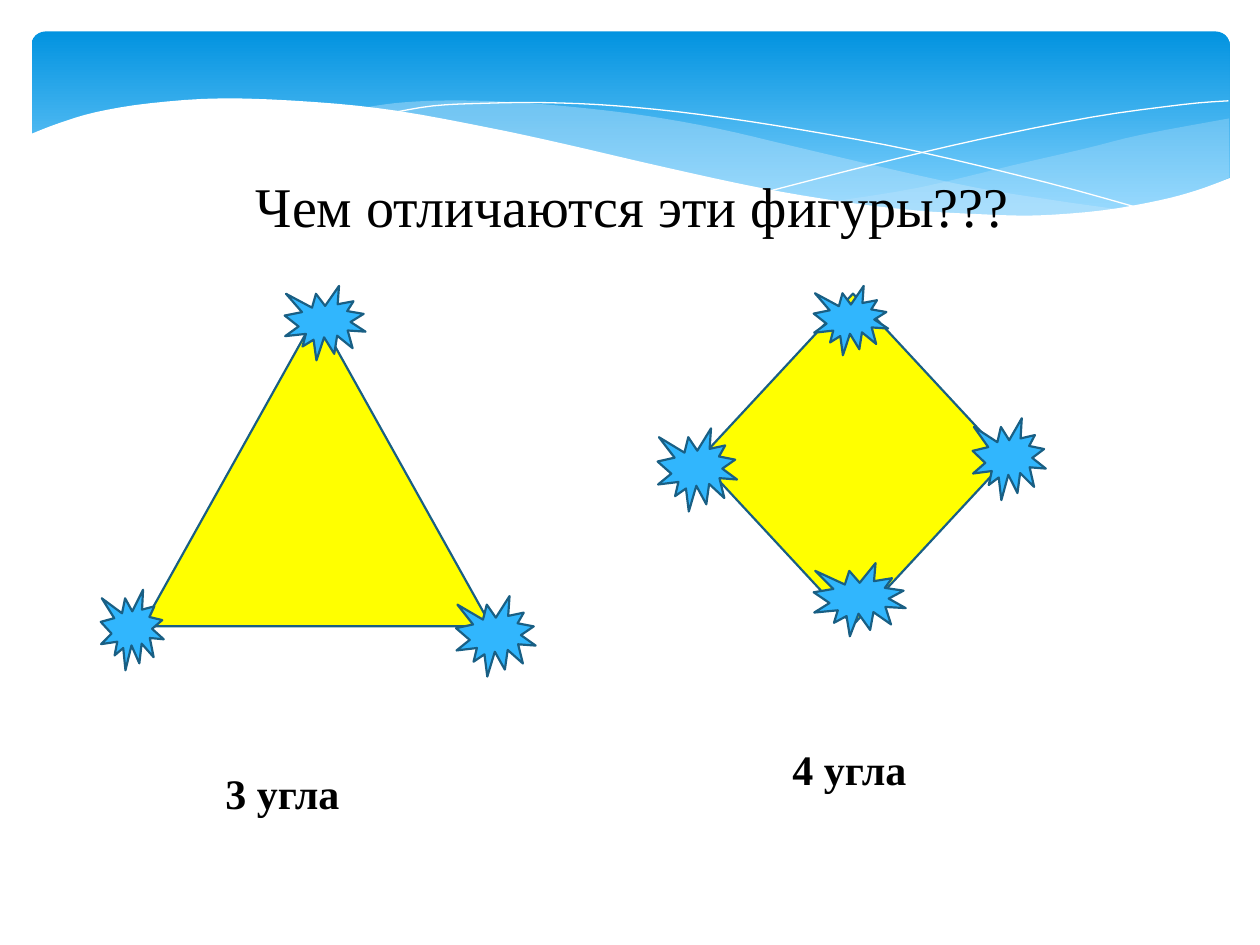
from dataclasses import dataclass

from lxml.etree import SubElement
from pptx import Presentation
from pptx.dml.color import RGBColor as Rgb
from pptx.enum.shapes import MSO_SHAPE as Preset
from pptx.enum.text import MSO_AUTO_SIZE as AutoSize
from pptx.oxml.ns import qn
from pptx.util import Pt


@dataclass(frozen=True)
class Theme:
    font: str = "Times New Roman"
    title_size: float = 32
    label_size: float = 24
    text: str = "000000"
    paper: str = "FFFFFF"
    sky_top: str = "0293E0"
    sky_bottom: str = "83D3FE"
    wave: str = "C6E7FC"
    figure: str = "FFFF00"
    burst: str = "31B6FD"
    outline: str = "195F84"
    outline_width: float = 1.25


def apply(target, values):
    for name, value in values.items():
        setattr(target, name, value)


def smooth(knots, steps=4):
    """Catmull-Rom curve through the knots."""
    padded = [knots[0], *knots, knots[-1]]
    curve = [knots[0]]
    for a, b, c, d in zip(padded, padded[1:], padded[2:], padded[3:]):
        for step in range(1, steps + 1):
            t = step / steps
            curve.append(tuple(
                (2 * q + (r - p) * t + (2 * p - 5 * q + 4 * r - s) * t ** 2
                 + (3 * q - p - 3 * r + s) * t ** 3) / 2
                for p, q, r, s in zip(a, b, c, d)))
    return curve


class SlideBuilder:
    def __init__(self, slide, theme):
        self.slide, self.theme = slide, theme

    def paint(self, shape, fill=None, line=None, width=0.0, alpha=None):
        shape.shadow.inherit = False
        if fill:
            shape.fill.solid()
            shape.fill.fore_color.rgb = Rgb.from_string(fill)
        else:
            shape.fill.background()
        if alpha is not None:
            color = shape._element.spPr.find(qn("a:solidFill"))[0]
            SubElement(color, qn("a:alpha"), val=str(alpha * 1000))
        if line:
            shape.line.color.rgb = Rgb.from_string(line)
            shape.line.width = Pt(width)
        else:
            shape.line.fill.background()

    def preset(self, kind, box, fill):
        shape = self.slide.shapes.add_shape(kind, *map(Pt, box))
        self.paint(shape, fill, self.theme.outline, self.theme.outline_width)

    def sky(self, box, radius):
        shape = self.slide.shapes.add_shape(Preset.ROUNDED_RECTANGLE, *map(Pt, box))
        shape.adjustments[0] = radius
        self.paint(shape)
        shape.fill.gradient()
        shape.fill.gradient_angle = 270
        colors = (self.theme.sky_top, self.theme.sky_bottom)
        for stop, color, position in zip(shape.fill.gradient_stops, colors, (0, 0.9)):
            stop.color.rgb = Rgb.from_string(color)
            stop.position = position

    def outline(self, points, closed=True, **style):
        start, *rest = [(Pt(x), Pt(y)) for x, y in points]
        builder = self.slide.shapes.build_freeform(*start)
        builder.add_line_segments(rest, close=closed)
        self.paint(builder.convert_to_shape(), **style)

    def text(self, words, box, size, bold=False, wrap=True):
        frame = self.slide.shapes.add_textbox(*map(Pt, box)).text_frame
        apply(frame, {"word_wrap": wrap, "auto_size": AutoSize.SHAPE_TO_FIT_TEXT})
        run = frame.paragraphs[0].add_run()
        run.text = words
        apply(run.font, {"name": self.theme.font, "size": Pt(size), "bold": bold})
        run.font.color.rgb = Rgb.from_string(self.theme.text)


# Curves of the header, in points
RIGHT_WAVE_TOP = [(475.9, 115.2), (524.9, 107.3), (579.6, 94.3), (619.9, 85),
                  (652.3, 77), (702.4, 67.7)]
RIGHT_WAVE_BOTTOM = [(702.4, 101.5), (683.3, 109.4), (663.1, 115.2), (640.1, 119.5),
                     (614.9, 122.4), (586.1, 123.8), (553.7, 123.1), (518.4, 120.2),
                     (475.9, 115.2)]
LONG_WAVE_TOP = [(205.9, 61.9), (225.4, 59), (247.7, 57.6), (273.6, 57.6),
                 (302.4, 59), (334.8, 61.9), (369.4, 66.2), (409.7, 73.4),
                 (452.9, 83.5), (508.3, 96.5), (558, 107.3), (602.6, 114.5),
                 (643, 120.2)]
LONG_WAVE_BOTTOM = [(643, 120.2), (617, 123.1), (589, 124.6), (557, 123.8),
                    (520.6, 121), (478.8, 115.9), (432.7, 107.6), (381.6, 97.2),
                    (323.3, 83.5), (275.8, 72.7), (232.6, 64.8), (205.9, 61.9)]
FALLING_LINE = [(222.5, 64.8), (247.7, 60.5), (278.6, 59), (311.8, 58.7),
                (352.1, 60.5), (400.3, 65.5), (457.9, 74.2), (523.4, 86.4),
                (598.3, 104.4), (653, 119.5)]
RISING_LINE = [(441.4, 108.7), (500.4, 93.6), (558.7, 79.9), (623.5, 67),
               (675.4, 59.8), (702, 57.6)]
PAPER_EDGE = [(16.6, 77), (33.1, 70.6), (54.7, 64.1), (85.7, 59), (127.4, 56.2),
              (180, 58.3), (227.5, 63.4), (281.5, 73.4), (321.8, 82.1),
              (380.9, 95.8), (434.2, 107.3), (481, 115.2), (522.7, 120.2),
              (560.2, 122.4), (592.6, 123.1), (630, 120.2), (662.4, 114.5),
              (684, 108.7), (703.4, 101.5)]
PAPER_BOTTOM = [(703.4, 161), (16.6, 161)]

# Bursts that mark the corners: left, top, width, height
TRIANGLE_CORNERS = [(57.6, 337, 36, 46), (162.7, 163.4, 46.2, 42.5),
                    (260.6, 340.6, 45.5, 46)]
DIAMOND_CORNERS = [(465, 163.4, 42.5, 39.6), (555.8, 239, 41.8, 46.8),
                   (465, 321.8, 52.6, 41.8), (375.8, 244.8, 45.4, 47.5)]


def main():
    theme = Theme()
    deck = Presentation()
    apply(deck, {"slide_width": Pt(720), "slide_height": Pt(540)})
    page = SlideBuilder(deck.slides.add_slide(deck.slide_layouts[6]), theme)

    # Header with waves
    page.sky((18, 18, 684.7, 112.3), 0.071)
    for top, bottom, alpha in ((RIGHT_WAVE_TOP, RIGHT_WAVE_BOTTOM, 29),
                               (LONG_WAVE_TOP, LONG_WAVE_BOTTOM, 40)):
        page.outline(smooth(top) + smooth(bottom), fill=theme.wave, alpha=alpha)
    for curve in (FALLING_LINE, RISING_LINE):
        page.outline(smooth(curve), closed=False, line=theme.paper)
    page.outline(smooth(PAPER_EDGE) + PAPER_BOTTOM, fill=theme.paper)

    # Figures
    page.preset(Preset.ISOSCELES_TRIANGLE, (81.4, 179.3, 199.4, 178.6), theme.figure)
    page.preset(Preset.DIAMOND, (399.6, 167.8, 175.7, 189.4), theme.figure)

    # Question
    page.text("Чем отличаются эти фигуры???", (139, 94.3, 445, 46),
              theme.title_size, wrap=False)

    # Corner bursts
    for corner in TRIANGLE_CORNERS + DIAMOND_CORNERS:
        page.preset(Preset.EXPLOSION1, corner, theme.burst)

    # Answers
    for answer, box in (("3 угла", (121.7, 434.9, 118, 36)),
                        ("4 угла", (445.7, 421.2, 90.7, 36))):
        page.text(answer, box, theme.label_size, bold=True)

    deck.save("out.pptx")


if __name__ == "__main__":
    main()
